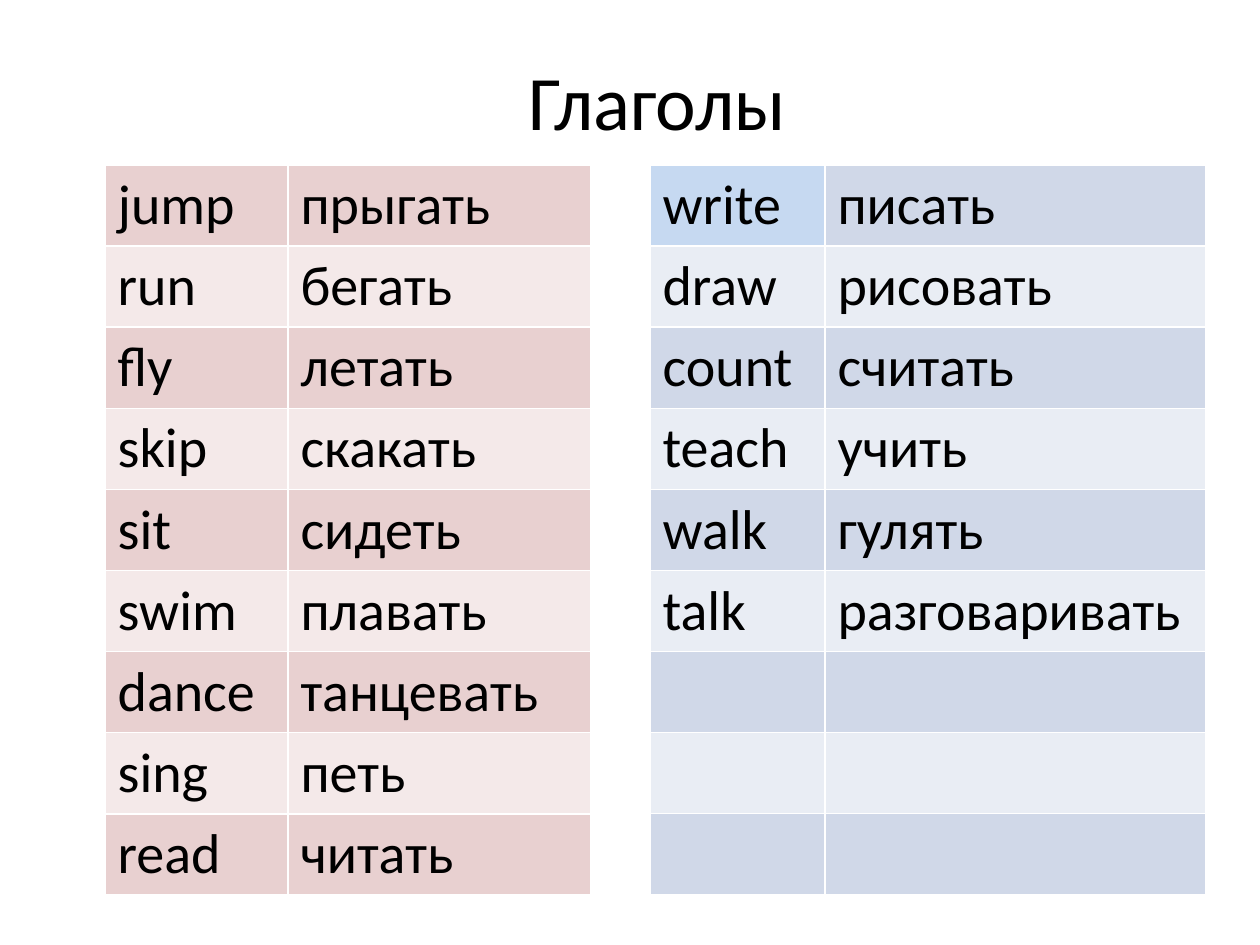
from pptx import Presentation
from pptx.dml.color import RGBColor
from pptx.enum.text import MSO_ANCHOR, PP_ALIGN
from pptx.oxml.ns import qn
from pptx.util import Pt
from lxml import etree

PX = 914400 // 126
FONT = "Calibri"
CENTER = PP_ALIGN.CENTER
MIDDLE = MSO_ANCHOR.MIDDLE

BLACK = RGBColor(0x00, 0x00, 0x00)
WHITE = RGBColor(0xFF, 0xFF, 0xFF)
ROSE = RGBColor(0xE8, 0xD0, 0xD0)
PALE_ROSE = RGBColor(0xF4, 0xE9, 0xE9)
BLUE = RGBColor(0xD0, 0xD8, 0xE8)
PALE_BLUE = RGBColor(0xE9, 0xED, 0xF4)
SKY = RGBColor(0xC6, 0xD9, 0xF1)

TABLE_TOP = 165
ROW_HEIGHT = 81
ROW_COUNT = 9

LEFT_VERBS = [
    ("jump", "прыгать"), ("run", "бегать"), ("fly", "летать"),
    ("skip", "скакать"), ("sit", "сидеть"), ("swim", "плавать"),
    ("dance", "танцевать"), ("sing", "петь"), ("read", "читать"),
]
RIGHT_VERBS = [
    ("write", "писать"), ("draw", "рисовать"), ("count", "считать"),
    ("teach", "учить"), ("walk", "гулять"), ("talk", "разговаривать"),
]


def px(length):
    return length * PX


def format_text(frame, size):
    for paragraph in frame.paragraphs:
        for span in paragraph.runs:
            span.font.name = FONT
            span.font.size = Pt(size)
            span.font.color.rgb = BLACK


def set_title(page, text):
    title = page.shapes.title
    title.left, title.top = px(105), px(45)
    title.width, title.height = px(1071), px(110)
    frame = title.text_frame
    frame.text = text
    frame.vertical_anchor = MIDDLE
    frame.margin_left = px(46)
    frame.paragraphs[0].alignment = CENTER
    format_text(frame, 44)


def fill_cell(cell, color):
    """Fill the cell and draw thin white borders on all four sides."""
    properties = cell._tc.get_or_add_tcPr()
    for side in ("lnL", "lnR", "lnT", "lnB"):
        line = etree.SubElement(properties, qn(f"a:{side}"), w=str(Pt(1)))
        solid = etree.SubElement(line, qn("a:solidFill"))
        etree.SubElement(solid, qn("a:srgbClr"), val=str(WHITE))
    cell.fill.solid()
    cell.fill.fore_color.rgb = color


def add_verb_table(page, left, widths, verbs, band_colors):
    """Add a banded table of verb pairs; rows beyond the verbs stay empty."""
    table = page.shapes.add_table(
        ROW_COUNT, len(widths), px(left), px(TABLE_TOP),
        px(sum(widths)), px(ROW_HEIGHT * ROW_COUNT)).table
    table.first_row = False
    for column, width in zip(table.columns, widths):
        column.width = px(width)
    for index, row in enumerate(table.rows):
        row.height = px(ROW_HEIGHT)
        for cell in row.cells:
            fill_cell(cell, band_colors[index % 2])
    for row, pair in zip(table.rows, verbs):
        for cell, word in zip(row.cells, pair):
            cell.text_frame.text = word
            format_text(cell.text_frame, 32)
    return table


def main():
    deck = Presentation()
    deck.slide_width, deck.slide_height = px(1260), px(945)
    page = deck.slides.add_slide(deck.slide_layouts[5])
    set_title(page, "Глаголы")
    add_verb_table(page, 105, (183, 303), LEFT_VERBS, (ROSE, PALE_ROSE))
    right_table = add_verb_table(
        page, 650, (175, 381), RIGHT_VERBS, (BLUE, PALE_BLUE))
    right_table.cell(0, 0).fill.fore_color.rgb = SKY
    deck.save("out.pptx")


if __name__ == "__main__":
    main()
